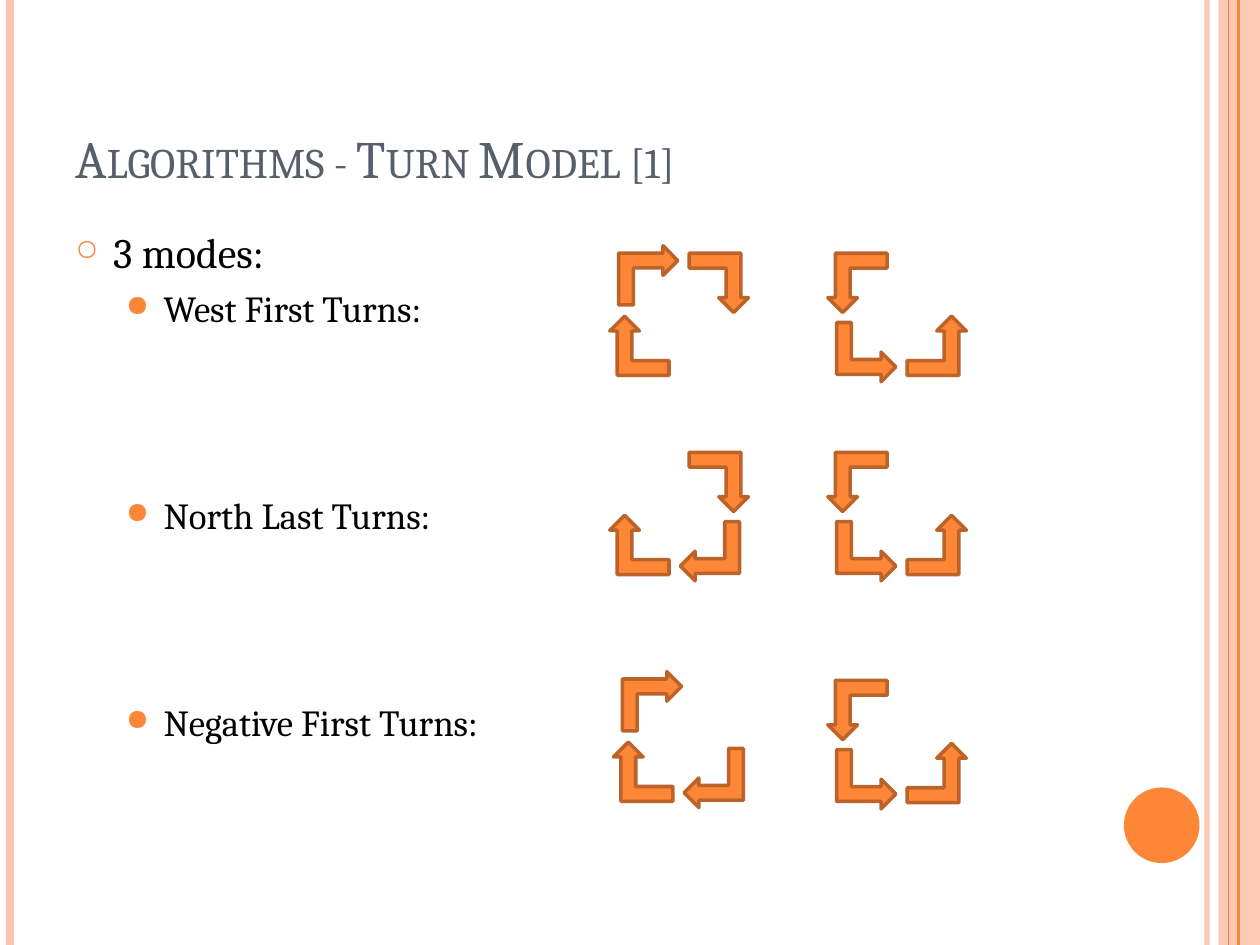
"""Build the slide on the three modes of the turn model."""
from dataclasses import dataclass

from lxml import etree
from pptx import Presentation
from pptx import util as u
from pptx.dml.color import RGBColor
from pptx.enum import shapes, text
from pptx.oxml import ns

PX = u.Inches(1) // 100


@dataclass(frozen=True)
class Theme:
    """Colours, font and type sizes of the slide."""

    font: str = "Cambria"
    accent: str = "FE8637"
    pale: str = "FEC3AE"
    outline: str = "BC6329"
    title: str = "575F6D"
    body: str = "000000"
    title_size: int = 30
    item_size: int = 24
    subitem_size: int = 21


THEME = Theme()

EDGE_LINES = [
    (958, THEME.pale, 3, 93),
    (8, THEME.pale, 4.5, 100),
    (983, THEME.accent, 1.5, 100),
    (975, THEME.accent, 0.75, 100),
]

# Corner of a cycle: x and y offset, rotation
CLOCKWISE = {
    "SW": (0, 50, 0),
    "NW": (7, -6, 90),
    "NE": (63, 0, 180),
    "SE": (56, 55, 270),
}
COUNTERCLOCKWISE = {"NW": (0, 0, 180), "SW": (7, 55, 90), "SE": (63, 50, 0)}

# Mode: left and top of the clockwise cycle, top of the other, clockwise turns
MODES = [
    ("West First Turns:", 484, 201, 201, ("SW", "NW", "NE")),
    ("North Last Turns:", 484, 359, 359, ("NE", "SE", "SW")),
    ("Negative First Turns:", 487, 539, 540, ("SE", "SW", "NW")),
]
COUNTERCLOCKWISE_LEFT = 657
ARROW_SIZE = 47


def px(*lengths):
    """Turn lengths in px into EMU."""
    return [u.Emu(length * PX) for length in lengths]


def add_child(parent, tag, **attributes):
    """Append a DrawingML child element."""
    return etree.SubElement(parent, ns.qn(tag), attributes)


def paint(fill, colour, opacity=100):
    """Give a fill a solid colour, translucent if asked."""
    fill.solid()
    fill.fore_color.rgb = RGBColor.from_string(colour)
    if opacity < 100:
        colour_element = fill._xPr.find(".//" + ns.qn("a:srgbClr"))
        add_child(colour_element, "a:alpha", val=str(opacity * 1000))


def add_edge_line(slide, x, colour, width, opacity):
    """Draw a line over the full height of the slide."""
    line = slide.shapes.add_connector(
        shapes.MSO_CONNECTOR.STRAIGHT, *px(x, 0, x, 750)
    )
    line.line.width = u.Pt(width)
    paint(line.line.fill, colour, opacity)
    add_child(line._element.spPr, "a:effectLst")


def add_shape(slide, kind, box, colour, opacity=100):
    """Add a filled preset shape without outline or shadow."""
    shape = slide.shapes.add_shape(kind, *px(*box))
    shape.shadow.inherit = False
    paint(shape.fill, colour, opacity)
    shape.line.fill.background()
    return shape


def add_turns(slide, left, top, corners, mirrored):
    """Draw the bent arrows of one cycle."""
    for x, y, rotation in corners:
        box = (left + x, top + y, ARROW_SIZE, ARROW_SIZE)
        arrow = add_shape(
            slide, shapes.MSO_SHAPE.BENT_UP_ARROW, box, THEME.accent
        )
        paint(arrow.line.fill, THEME.outline)
        arrow.line.width = u.Pt(2)
        arrow.rotation = rotation
        if mirrored:
            arrow._element.spPr.get_or_add_xfrm().set("flipH", "1")


def add_text_frame(slide, box, anchor):
    """Add a wrapping text box and return its frame."""
    frame = slide.shapes.add_textbox(*px(*box)).text_frame
    frame.word_wrap = True
    frame.vertical_anchor = anchor
    return frame


def style(paragraph, size, colour):
    """Format the runs of a paragraph."""
    for run in paragraph.runs:
        run.font.name = THEME.font
        run.font.size = u.Pt(size)
        run.font.color.rgb = RGBColor.from_string(colour)


def add_bullet(paragraph, symbol, percent, indent):
    """Give a paragraph a hanging bullet in the accent colour."""
    properties = paragraph._p.get_or_add_pPr()
    properties.set("marL", str(indent * PX))
    properties.set("indent", str(-30 * PX))
    add_child(add_child(properties, "a:buClr"), "a:srgbClr", val=THEME.accent)
    add_child(properties, "a:buSzPct", val=str(percent * 1000))
    add_child(properties, "a:buChar", char=symbol)


def add_title(slide, wording):
    """Add the title in small capitals."""
    frame = add_text_frame(slide, (50, 30, 817, 125), text.MSO_ANCHOR.BOTTOM)
    frame.text = wording
    paragraph = frame.paragraphs[0]
    style(paragraph, THEME.title_size, THEME.title)
    paragraph.runs[0]._r.get_or_add_rPr().set("cap", "small")


def add_body(slide, heading, items):
    """Add the heading and the widely spaced items below it."""
    frame = add_text_frame(slide, (50, 175, 817, 533), text.MSO_ANCHOR.TOP)
    frame.text = "\n".join([heading, *items])
    first, *others = frame.paragraphs
    first.space_before = u.Pt(6)
    style(first, THEME.item_size, THEME.body)
    add_bullet(first, "○", 70, 30)
    for index, paragraph in enumerate(others):
        paragraph.level = 1
        paragraph.space_before = u.Pt(93 if index else 5)
        style(paragraph, THEME.subitem_size, THEME.body)
        add_bullet(paragraph, "●", 80, 70)


def main():
    """Build and save the slide."""
    presentation = Presentation()
    presentation.slide_width, presentation.slide_height = px(1000, 750)
    slide = presentation.slides.add_slide(presentation.slide_layouts[6])

    add_shape(
        slide, shapes.MSO_SHAPE.RECTANGLE, (967, 0, 33, 750), THEME.pale, 87
    )
    for edge_line in EDGE_LINES:
        add_edge_line(slide, *edge_line)
    add_shape(slide, shapes.MSO_SHAPE.OVAL, (892, 625, 60, 60), THEME.accent)

    add_title(slide, "Algorithms - Turn Model [1]")
    add_body(slide, "3 modes:", [mode[0] for mode in MODES])
    for _, left, top, other_top, names in MODES:
        corners = [CLOCKWISE[name] for name in names]
        add_turns(slide, left, top, corners, True)
        add_turns(
            slide, COUNTERCLOCKWISE_LEFT, other_top,
            COUNTERCLOCKWISE.values(), False,
        )

    presentation.save("out.pptx")


if __name__ == "__main__":
    main()
